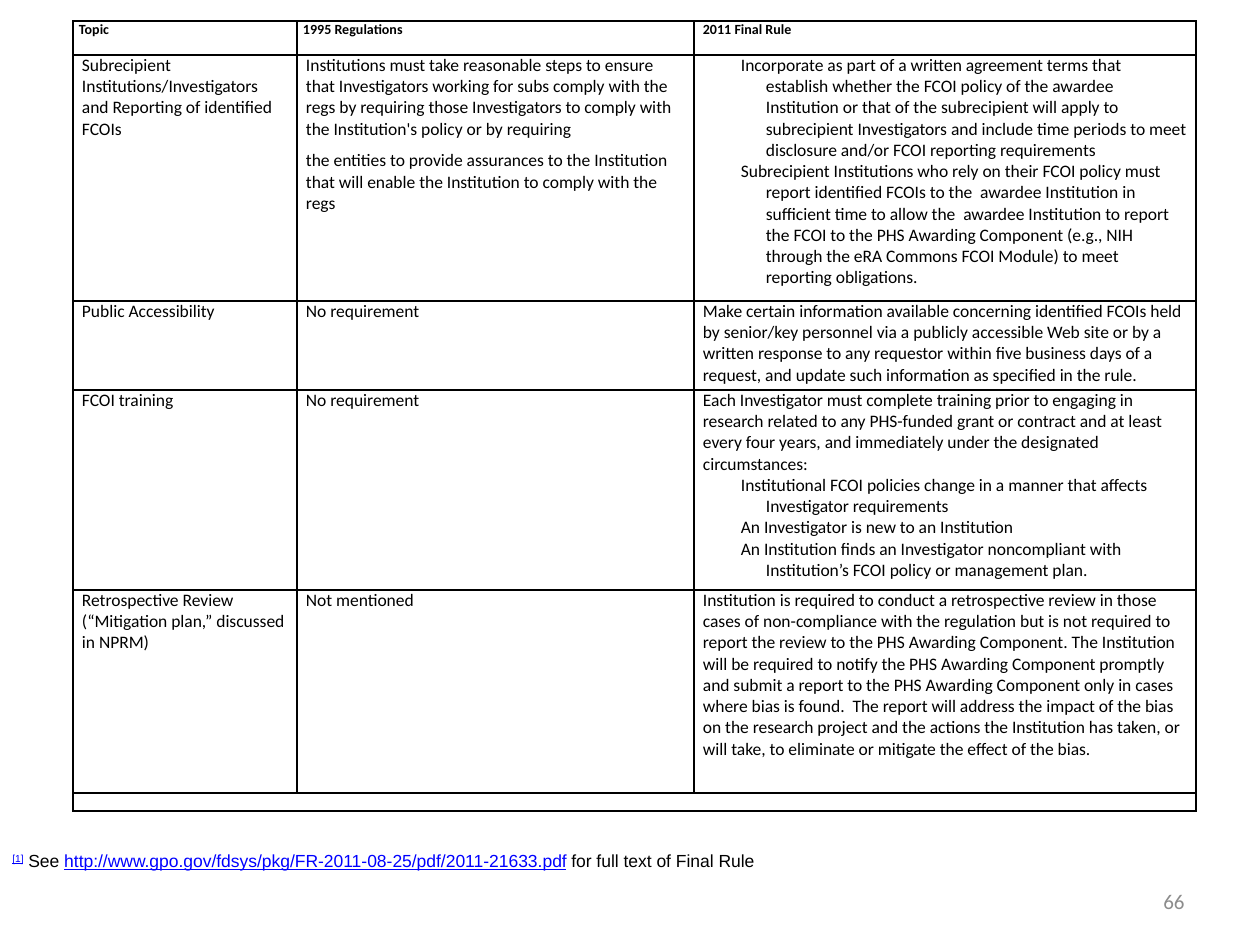
from dataclasses import dataclass

from lxml.etree import SubElement
from pptx import Presentation
from pptx.dml.color import RGBColor
from pptx.enum.text import MSO_ANCHOR, PP_ALIGN
from pptx.oxml.ns import qn
from pptx.util import Emu, Pt

PX = 914400 // 126
BLACK, BLUE, GREY = "000000", "0000FF", "8C8C8C"
COLS = [224, 397, 502]
ROWS = [34, 246, 89, 200, 203, 18]


@dataclass(frozen=True)
class Para:
    text: str
    hanging: bool = False
    before: int = 0


def px(n: int) -> Emu:
    return Emu(n * PX)


def rgb(value: str) -> RGBColor:
    return RGBColor.from_string(value)


def add_run(p, text: str, color: str = BLACK, **fmt):
    r = p.add_run()
    r.text = text
    r.font.color.rgb = rgb(color)
    for name, value in fmt.items():
        setattr(r.font, name, value)
    return r


def style_cell(cell, left: int, right: int) -> None:
    """Clear the fill, set the margins and draw a 1 pt border on all sides."""
    margins = {"margin_left": left, "margin_right": right, "margin_top": 0, "margin_bottom": 0}
    for name, value in margins.items():
        setattr(cell, name, px(value))
    cell.fill.background()
    tc_pr = cell._tc.get_or_add_tcPr()
    for i, side in enumerate(("lnL", "lnR", "lnT", "lnB")):
        ln = SubElement(tc_pr, qn(f"a:{side}"), w=str(Pt(1)))
        fill = SubElement(ln, qn("a:solidFill"))
        SubElement(fill, qn("a:srgbClr"), val=BLACK)
        tc_pr.insert(i, ln)


def fill_cell(cell, paras: list[Para], size: int, bold: bool) -> None:
    tf = cell.text_frame
    for i, para in enumerate(paras):
        p = tf.paragraphs[0] if i == 0 else tf.add_paragraph()
        if para.hanging:
            p_pr = p._p.get_or_add_pPr()
            p_pr.set("marL", str(px(63)))
            p_pr.set("indent", str(px(-25)))
        p.space_before = Pt(para.before)
        add_run(p, para.text, name="Calibri", size=Pt(size), bold=bold)


def add_box(s, left: int, top: int, width: int, height: int, align: PP_ALIGN):
    tf = s.shapes.add_textbox(px(left), px(top), px(width), px(height)).text_frame
    tf.word_wrap = True
    tf.vertical_anchor = MSO_ANCHOR.MIDDLE
    p = tf.paragraphs[0]
    p.alignment = align
    return p


HEADER = ["Topic", "1995 Regulations", "2011 Final Rule"]
BODY = [
    [
        [Para("Subrecipient Institutions/Investigators and Reporting of identified FCOIs")],
        [
            Para("Institutions must take reasonable steps to ensure that Investigators working for "
                 "subs comply with the regs by requiring those Investigators to comply with the "
                 "Institution's policy or by requiring"),
            Para("the entities to provide assurances to the Institution that will enable the "
                 "Institution to comply with the regs", before=6),
        ],
        [
            Para("Incorporate as part of a written agreement terms that establish whether the FCOI "
                 "policy of the awardee Institution or that of the subrecipient will apply to "
                 "subrecipient Investigators and include time periods to meet disclosure and/or "
                 "FCOI reporting requirements", hanging=True),
            Para("Subrecipient Institutions who rely on their FCOI policy must report identified "
                 "FCOIs to the  awardee Institution in sufficient time to allow the  awardee "
                 "Institution to report the FCOI to the PHS Awarding Component (e.g., NIH through "
                 "the eRA Commons FCOI Module) to meet reporting obligations.", hanging=True),
        ],
    ],
    [
        [Para("Public Accessibility")],
        [Para("No requirement")],
        [Para("Make certain information available concerning identified FCOIs held by senior/key "
              "personnel via a publicly accessible Web site or by a written response to any "
              "requestor within five business days of a request, and update such information as "
              "specified in the rule.")],
    ],
    [
        [Para("FCOI training")],
        [Para("No requirement")],
        [
            Para("Each Investigator must complete training prior to engaging in  research related "
                 "to any PHS-funded grant or contract and at least every four years, and "
                 "immediately under the designated circumstances:"),
            Para("Institutional FCOI policies change in a manner that affects Investigator "
                 "requirements", hanging=True),
            Para("An Investigator is new to an Institution", hanging=True),
            Para("An Institution finds an Investigator noncompliant with Institution’s FCOI policy "
                 "or management plan.", hanging=True),
        ],
    ],
    [
        [Para("Retrospective Review (“Mitigation plan,” discussed in NPRM)")],
        [Para("Not mentioned")],
        [Para("Institution is required to conduct a retrospective review in those cases of "
              "non-compliance with the regulation but is not required to report the review to the "
              "PHS Awarding Component. The Institution will be required to notify the PHS Awarding "
              "Component promptly and submit a report to the PHS Awarding Component only in cases "
              "where bias is found.  The report will address the impact of the bias on the "
              "research project and the actions the Institution has taken, or will take, to "
              "eliminate or mitigate the effect of the bias.")],
    ],
]


def add_rules_table(s) -> None:
    table = s.shapes.add_table(len(ROWS), len(COLS), px(73), px(21),
                               px(sum(COLS)), px(sum(ROWS))).table
    table.first_row = table.horz_banding = False
    for col, width in zip(table.columns, COLS):
        col.width = px(width)
    for row, height in zip(table.rows, ROWS):
        row.height = px(height)

    for c, title in enumerate(HEADER):
        style_cell(table.cell(0, c), 9 if c == 2 else 6, 6)
        fill_cell(table.cell(0, c), [Para(title)], 8, True)
    for r, row in enumerate(BODY, start=1):
        for c, paras in enumerate(row):
            style_cell(table.cell(r, c), 9, 9)
            fill_cell(table.cell(r, c), paras, 10, False)

    last = len(ROWS) - 1
    table.cell(last, 0).merge(table.cell(last, 2))
    for c in range(len(COLS)):
        cell = table.cell(last, c)
        style_cell(cell, 9, 9)
        SubElement(cell.text_frame.paragraphs[0]._p, qn("a:endParaRPr"), sz="800")


def add_footnote(s) -> None:
    p = add_box(s, 0, 829, 1260, 63, PP_ALIGN.LEFT)
    fmt = {"name": "Arial", "size": Pt(10)}
    mark = add_run(p, "[1]", BLUE, underline=True, **fmt)
    mark.font._element.set("baseline", "30000")
    add_run(p, " See ", **fmt)
    add_run(p, "http://www.gpo.gov/fdsys/pkg/FR-2011-08-25/pdf/2011-21633.pdf", BLUE,
            underline=True, **fmt)
    add_run(p, " for full text of Final Rule", **fmt)


def main() -> None:
    prs = Presentation()
    prs.slide_width, prs.slide_height = px(1260), px(945)
    s = prs.slides.add_slide(prs.slide_layouts[6])
    number = add_box(s, 903, 876, 294, 50, PP_ALIGN.RIGHT)
    add_run(number, "66", GREY, name="Calibri", size=Pt(12))
    add_rules_table(s)
    add_footnote(s)
    prs.save("out.pptx")


if __name__ == "__main__":
    main()
